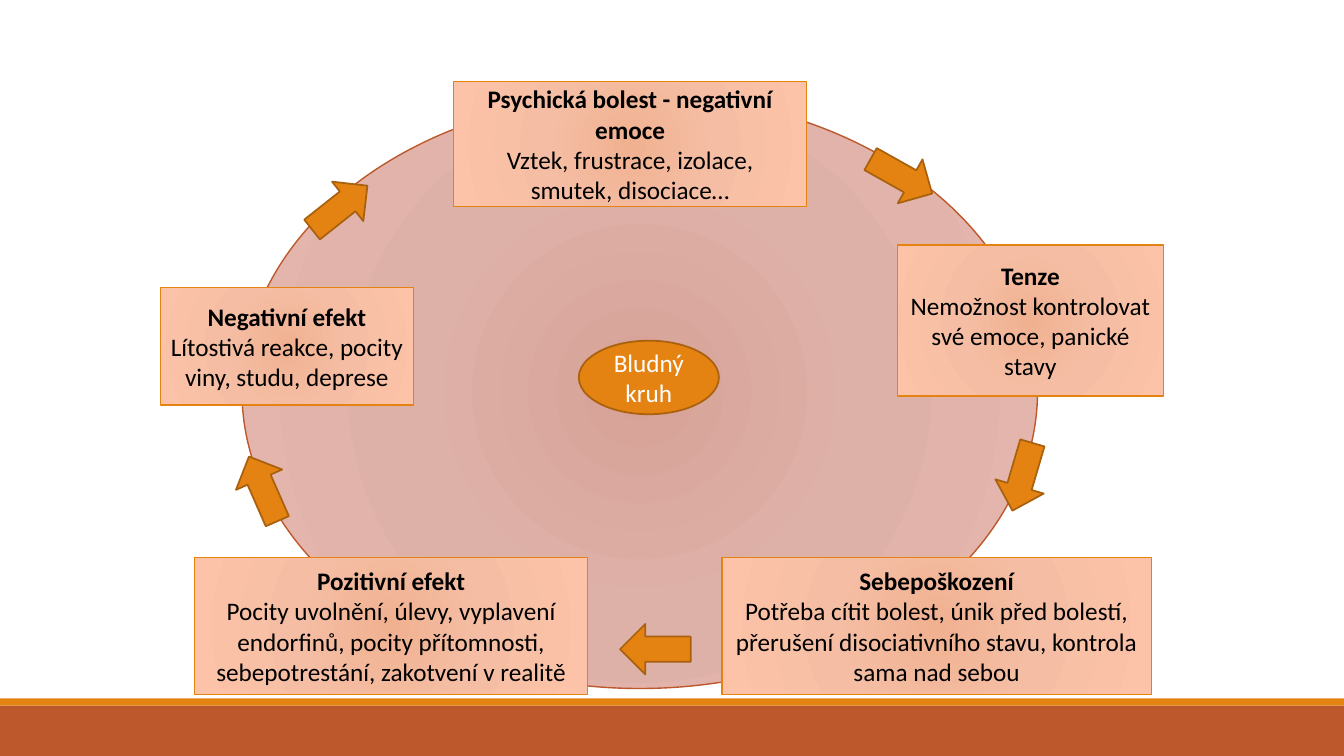
from dataclasses import dataclass

from lxml.etree import SubElement
from pptx import Presentation
from pptx.dml.color import RGBColor
from pptx.enum.shapes import MSO_SHAPE
from pptx.enum.text import MSO_ANCHOR, PP_ALIGN
from pptx.oxml.ns import qn
from pptx.shapes.autoshape import Shape
from pptx.slide import Slide
from pptx.util import Inches, Pt

COLORS = {
    "rust": "BD582C",
    "orange": "E48312",
    "brown": "A9610D",
    "black": "000000",
    "white": "FFFFFF",
}
STOP_POSITIONS = (0, 45, 100)
CYCLE_GRADIENT = ("D7A197", "DEB1A8", "E6B7AE")
STAGE_GRADIENT = ("F0B191", "F5BEA4", "FDC3A8")
ARROW_WIDTH, ARROW_HEIGHT = 0.7, 0.5


@dataclass(frozen=True)
class Stage:
    left: float
    top: float
    width: float
    height: float
    heading: str
    details: str


@dataclass(frozen=True)
class Arrow:
    left: float
    top: float
    rotation: float


STAGES = [
    Stage(4.5, 0.81, 3.5, 1.24, "Psychická bolest - negativní emoce",
          "Vztek, frustrace, izolace, smutek, disociace…"),
    Stage(8.9, 2.43, 2.64, 1.5, "Tenze",
          "Nemožnost kontrolovat své emoce, panické stavy"),
    Stage(7.16, 5.53, 4.26, 1.36, "Sebepoškození",
          "Potřeba cítit bolest, únik před bolestí, přerušení disociativního "
          "stavu, kontrola sama nad sebou"),
    Stage(1.93, 5.53, 3.9, 1.36, "Pozitivní efekt",
          "Pocity uvolnění, úlevy, vyplavení endorfinů, pocity přítomnosti, "
          "sebepotrestání, zakotvení v realitě"),
    Stage(1.59, 2.85, 2.51, 1.17, "Negativní efekt",
          "Lítostivá reakce, pocity viny, studu, deprese"),
]
ARROWS = [
    Arrow(8.59, 1.5, 29.3),
    Arrow(9.79, 4.48, 106.4),
    Arrow(6.15, 6.19, 180),
    Arrow(2.26, 4.6, 246.3),
    Arrow(3.02, 1.81, 321.6),
]


def apply_gradient(shape: Shape, colors: tuple[str, ...]) -> None:
    """Fill a shape with a circular gradient."""
    properties = shape.element.spPr
    gradient = SubElement(properties, qn("a:gradFill"), rotWithShape="1")
    properties.find(qn("a:prstGeom")).addnext(gradient)
    stops = SubElement(gradient, qn("a:gsLst"))
    for position, color in zip(STOP_POSITIONS, colors):
        stop = SubElement(stops, qn("a:gs"), pos=str(position * 1000))
        SubElement(stop, qn("a:srgbClr"), val=color)
    circle = SubElement(gradient, qn("a:path"), path="circle")
    SubElement(circle, qn("a:fillToRect"), {side: "100000" for side in "ltrb"})


def add_figure(slide: Slide, kind: MSO_SHAPE, left: float, top: float,
               width: float, height: float, *, fill: str | None = None,
               gradient: tuple[str, ...] = (), line: str | None = None,
               line_width: float = 1) -> Shape:
    """Add a preset shape with a plain or gradient fill."""
    shape = slide.shapes.add_shape(
        kind, Inches(left), Inches(top), Inches(width), Inches(height))
    shape.shadow.inherit = False
    if gradient:
        apply_gradient(shape, gradient)
    else:
        shape.fill.solid()
        shape.fill.fore_color.rgb = RGBColor.from_string(COLORS[fill])
    if line:
        shape.line.color.rgb = RGBColor.from_string(COLORS[line])
        shape.line.width = Pt(line_width)
    else:
        shape.line.fill.background()
    return shape


def write_text(shape: Shape, text: str, *, color: str = "black",
               size: float = 18, first_bold: bool = False) -> None:
    """Write centred lines, one paragraph each."""
    frame = shape.text_frame
    frame.word_wrap = True
    frame.vertical_anchor = MSO_ANCHOR.MIDDLE
    frame.text = text
    for index, paragraph in enumerate(frame.paragraphs):
        paragraph.alignment = PP_ALIGN.CENTER
        font = paragraph.runs[0].font
        font.name = "Calibri"
        font.size = Pt(size)
        font.bold = first_bold and index == 0
        font.color.rgb = RGBColor.from_string(COLORS[color])


def main() -> None:
    presentation = Presentation()
    presentation.slide_width = Inches(13.33)
    presentation.slide_height = Inches(7.5)
    slide = presentation.slides.add_slide(presentation.slide_layouts[6])

    # Bottom bars
    add_figure(slide, MSO_SHAPE.RECTANGLE, 0, 7, 13.33, 0.5, fill="rust")
    add_figure(slide, MSO_SHAPE.RECTANGLE, 0, 6.93, 13.33, 0.07, fill="orange")

    # Large cycle behind the stages
    add_figure(slide, MSO_SHAPE.OVAL, 2.4, 0.94, 7.89, 5.89,
               gradient=CYCLE_GRADIENT, line="rust")

    # Centre label
    center = add_figure(slide, MSO_SHAPE.OVAL, 5.74, 3.38, 1.39, 0.73,
                        fill="orange", line="brown", line_width=1.25)
    write_text(center, "Bludný kruh", color="white")

    # Stages, clockwise from the top
    for stage in STAGES:
        box = add_figure(slide, MSO_SHAPE.RECTANGLE, stage.left, stage.top,
                         stage.width, stage.height,
                         gradient=STAGE_GRADIENT, line="orange")
        write_text(box, f"{stage.heading}\n{stage.details}", first_bold=True)

    # Arrows between the stages
    for arrow in ARROWS:
        shape = add_figure(slide, MSO_SHAPE.RIGHT_ARROW, arrow.left, arrow.top,
                           ARROW_WIDTH, ARROW_HEIGHT,
                           fill="orange", line="brown", line_width=1.25)
        shape.rotation = arrow.rotation

    presentation.save("out.pptx")


if __name__ == "__main__":
    main()
